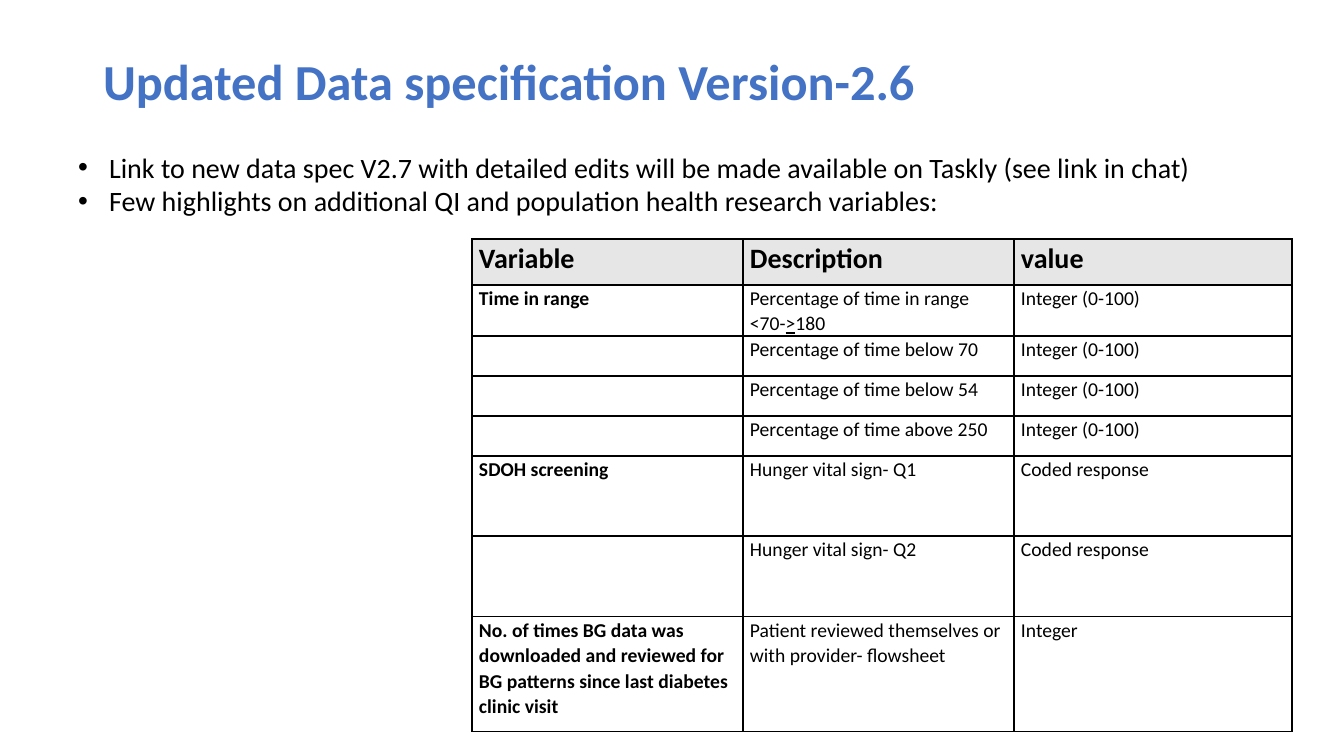
import lxml.etree
import pptx
import pptx.dml.color
import pptx.enum.text
import pptx.oxml.ns
import pptx.util

EMU_PER_PX = 914400 / 100.8
COLORS = {"title": "4472C4", "text": "000000", "border": "000000",
          "header": "E7E6E6", "cell": "FFFFFF"}

HEADINGS = ["Variable", "Description", "value"]
PERCENT = "Integer (0-100)"
CODED = "Coded response"
# A tuple holds the parts of one text; every second part is underlined.
VARIABLES = [
    ["Time in range", ("Percentage of time in range <70-", ">", "180"), PERCENT],
    ["", "Percentage of time below 70", PERCENT],
    ["", "Percentage of time below 54", PERCENT],
    ["", "Percentage of time above 250", PERCENT],
    ["SDOH screening", "Hunger vital sign- Q1", CODED],
    ["", "Hunger vital sign- Q2", CODED],
    ["No. of times BG data was downloaded and reviewed for BG patterns "
     "since last diabetes clinic visit",
     "Patient reviewed themselves or with provider- flowsheet", "Integer"],
]
COLUMN_WIDTHS = [271, 271, 278]
ROW_HEIGHTS = [46, 51, 40, 40, 40, 80, 81, 115]
HIGHLIGHTS = [
    "Link to new data spec V2.7 with detailed edits will be made available "
    "on Taskly (see link in chat)",
    "Few highlights on additional QI and population health research variables:",
]


def px(length):
    return pptx.util.Emu(round(length * EMU_PER_PX))


def rgb(name):
    return pptx.dml.color.RGBColor.from_string(COLORS[name])


def write(paragraph, text, size=14, color="text", bold=False, spacing=1.0):
    """Fill a paragraph with a text or a tuple of text parts."""
    paragraph.line_spacing = spacing
    paragraph.space_before = pptx.util.Pt(0)
    paragraph.alignment = pptx.enum.text.PP_ALIGN.LEFT
    parts = text if isinstance(text, tuple) else (text,)
    for index, part in enumerate(parts):
        run = paragraph.add_run()
        run.text = part
        run.font.name = "Calibri"
        run.font.size = pptx.util.Pt(size)
        run.font.bold = bold
        run.font.underline = index % 2 == 1
        run.font.color.rgb = rgb(color)


class SpecSlide:
    def __init__(self, presentation):
        self.slide = presentation.slides.add_slide(presentation.slide_layouts[1])

    def place(self, holder, left, top, width, height):
        holder.left, holder.top = px(left), px(top)
        holder.width, holder.height = px(width), px(height)
        holder.text_frame.word_wrap = True
        holder.text_frame.auto_size = pptx.enum.text.MSO_AUTO_SIZE.NONE
        return holder.text_frame

    def title(self, text, *box):
        frame = self.place(self.slide.shapes.title, *box)
        frame.vertical_anchor = pptx.enum.text.MSO_ANCHOR.MIDDLE
        write(frame.paragraphs[0], text, size=36, color="title", bold=True,
              spacing=0.9)

    def bullets(self, items, *box, indent):
        frame = self.place(self.slide.placeholders[1], *box)
        frame.vertical_anchor = pptx.enum.text.MSO_ANCHOR.TOP
        for index, item in enumerate(items):
            paragraph = frame.add_paragraph() if index else frame.paragraphs[0]
            write(paragraph, item, size=20)
            properties = paragraph._p.get_or_add_pPr()
            properties.set("marL", str(px(indent)))
            properties.set("indent", str(-px(indent)))
            for tag, key, value in (("a:buFont", "typeface", "Arial"),
                                    ("a:buChar", "char", "•")):
                lxml.etree.SubElement(properties, pptx.oxml.ns.qn(tag)).set(key, value)

    def table(self, rows, left, top, widths, heights):
        table = self.slide.shapes.add_table(
            len(heights), len(widths), px(left), px(top),
            px(sum(widths)), px(sum(heights))).table
        for column, width in zip(table.columns, widths):
            column.width = px(width)
        for row, height in zip(table.rows, heights):
            row.height = px(height)
        for row_index, row in enumerate(rows):
            for column_index, text in enumerate(row):
                self.cell(table.cell(row_index, column_index), text,
                          header=row_index == 0, first=column_index == 0)

    def cell(self, cell, text, header, first):
        cell.margin_left = cell.margin_right = px(7)
        cell.margin_top = cell.margin_bottom = 0
        self.borders(cell)
        cell.fill.solid()
        cell.fill.fore_color.rgb = rgb("header" if header else "cell")
        if text:
            write(cell.text_frame.paragraphs[0], text, size=20 if header else 14,
                  bold=header or first, spacing=1.07)

    def borders(self, cell):
        qn = pptx.oxml.ns.qn
        properties = cell._tc.get_or_add_tcPr()
        for side in ("a:lnL", "a:lnR", "a:lnT", "a:lnB"):
            line = lxml.etree.SubElement(properties, qn(side))
            line.set("w", str(pptx.util.Pt(1)))
            fill = lxml.etree.SubElement(line, qn("a:solidFill"))
            lxml.etree.SubElement(fill, qn("a:srgbClr")).set("val", COLORS["border"])


def main():
    presentation = pptx.Presentation()
    presentation.slide_width, presentation.slide_height = px(1344), px(756)
    spec_slide = SpecSlide(presentation)

    # Heading
    spec_slide.title("Updated Data specification Version-2.6", 93, 40, 1159, 89)

    # Variable table
    spec_slide.table([HEADINGS] + VARIABLES, 472, 239, COLUMN_WIDTHS, ROW_HEIGHTS)

    # Highlights
    spec_slide.bullets(HIGHLIGHTS, 68, 145, 1139, 78, indent=31)

    presentation.save("out.pptx")


if __name__ == "__main__":
    main()
